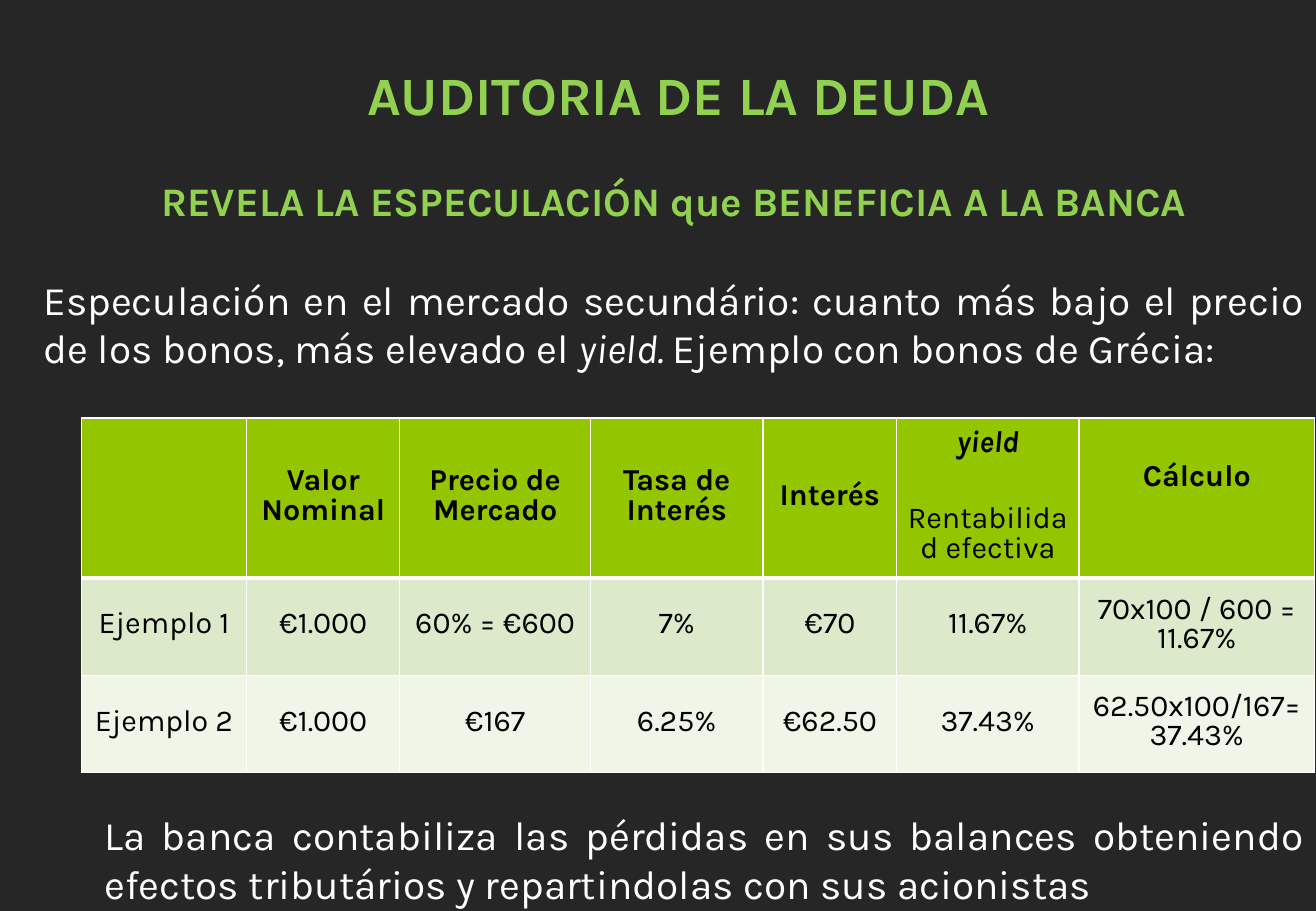
from lxml import etree
from pptx import Presentation
from pptx import util as u
from pptx.dml.color import RGBColor
from pptx.enum import text
from pptx.oxml import ns

DARK = RGBColor(0x26, 0x26, 0x26)
GREEN = RGBColor(0x92, 0xD0, 0x50)
WHITE = RGBColor(0xFF, 0xFF, 0xFF)
BLACK = RGBColor(0x00, 0x00, 0x00)
HEADER = RGBColor(0x94, 0xC6, 0x00)
BANDS = [HEADER, RGBColor(0xDC, 0xEA, 0xCB), RGBColor(0xEF, 0xF5, 0xE7)]


def add_run(paragraph, words, size, color, bold=False, italic=False):
    run = paragraph.add_run()
    run.text = words
    run.font.name = "Karla"
    run.font.size = u.Pt(size)
    run.font.color.rgb = color
    run.font.bold = bold
    run.font.italic = italic


def add_border(cell, side, width):
    properties = cell._tc.get_or_add_tcPr()
    line = etree.SubElement(properties, ns.qn(f"a:{side}"), w=str(u.Pt(width)))
    fill = etree.SubElement(line, ns.qn("a:solidFill"))
    etree.SubElement(fill, ns.qn("a:srgbClr"), val=str(WHITE))


presentation = Presentation()
presentation.slide_width = u.Inches(10.83)
presentation.slide_height = u.Inches(7.5)
slide = presentation.slides.add_slide(presentation.slide_layouts[6])
slide.background.fill.solid()
slide.background.fill.fore_color.rgb = DARK

CENTER = text.PP_ALIGN.CENTER
JUSTIFY = text.PP_ALIGN.JUSTIFY
body_paragraphs = [
    (CENTER, 0, 0.08, [("AUDITORIA DE LA DEUDA", 32, GREEN, True)]),
    (CENTER, 29, 0, [("REVELA LA ESPECULACIÓN que BENEFICIA A LA BANCA", 24, GREEN, True)]),
    (JUSTIFY, 30, 0, [
        ("Especulación en el mercado secundário: cuanto más bajo el precio "
         "de los bonos, más elevado el ", 24, WHITE),
        ("yield. ", 24, WHITE, False, True),
        ("Ejemplo con bonos de Grécia:", 24, WHITE),
    ]),
    (JUSTIFY, 260, 0.5, [
        ("La banca contabiliza las pérdidas en sus balances obteniendo "
         "efectos tributários y repartindolas con sus acionistas", 24, WHITE),
    ]),
]
body = slide.shapes.add_textbox(u.Inches(0.26), u.Inches(0.46), u.Inches(10.57), u.Inches(7.04))
body.text_frame.word_wrap = True
for index, (alignment, space, indent, runs) in enumerate(body_paragraphs):
    paragraph = body.text_frame.add_paragraph() if index else body.text_frame.paragraphs[0]
    paragraph.alignment = alignment
    paragraph.space_before = u.Pt(space)
    paragraph._p.get_or_add_pPr().set("marL", str(u.Inches(indent)))
    for run in runs:
        add_run(paragraph, *run)

column_widths = [1.36, 1.26, 1.57, 1.42, 1.1, 1.5, 1.94]
row_heights = [1.32, 0.8, 0.8]
bond_rows = [
    ["", "Valor Nominal", "Precio de Mercado", "Tasa de Interés", "Interés",
     "yield\nRentabilidad efectiva", "Cálculo"],
    ["Ejemplo 1", "€1.000", "60% = €600", "7%", "€70", "11.67%", "70x100 / 600 = 11.67%"],
    ["Ejemplo 2", "€1.000", "€167", "6.25%", "€62.50", "37.43%", "62.50x100/167= 37.43%"],
]
table = slide.shapes.add_table(
    len(row_heights), len(column_widths),
    u.Inches(0.67), u.Inches(3.44), u.Inches(10.15), u.Inches(2.92)).table
table.first_row = False
table.horz_banding = False
for column, width in zip(table.columns, column_widths):
    column.width = u.Inches(width)
for row, height in zip(table.rows, row_heights):
    row.height = u.Inches(height)

for row_index, values in enumerate(bond_rows):
    for column_index, value in enumerate(values):
        cell = table.cell(row_index, column_index)
        cell.margin_left = cell.margin_right = u.Inches(0.05)
        cell.margin_top = cell.margin_bottom = 0
        cell.vertical_anchor = text.MSO_ANCHOR.MIDDLE
        add_border(cell, "lnL", 1)
        add_border(cell, "lnR", 1)
        add_border(cell, "lnT", 3 if row_index == 1 else 1)
        add_border(cell, "lnB", 3 if row_index == 0 else 1)
        cell.fill.solid()
        cell.fill.fore_color.rgb = BANDS[row_index]
        for index, words in enumerate(value.split("\n")):
            paragraph = cell.text_frame.add_paragraph() if index else cell.text_frame.paragraphs[0]
            paragraph.alignment = CENTER
            paragraph.line_spacing = u.Pt(17.6)
            paragraph.space_after = u.Pt(27.6 if words == "yield" else 10)
            if words:
                add_run(paragraph, words, 18, BLACK, row_index == 0 and index == 0, words == "yield")

calculation_header = table.cell(0, 6)
calculation_header.vertical_anchor = text.MSO_ANCHOR.TOP
calculation_header.margin_top = u.Inches(0.38)

presentation.save("out.pptx")
